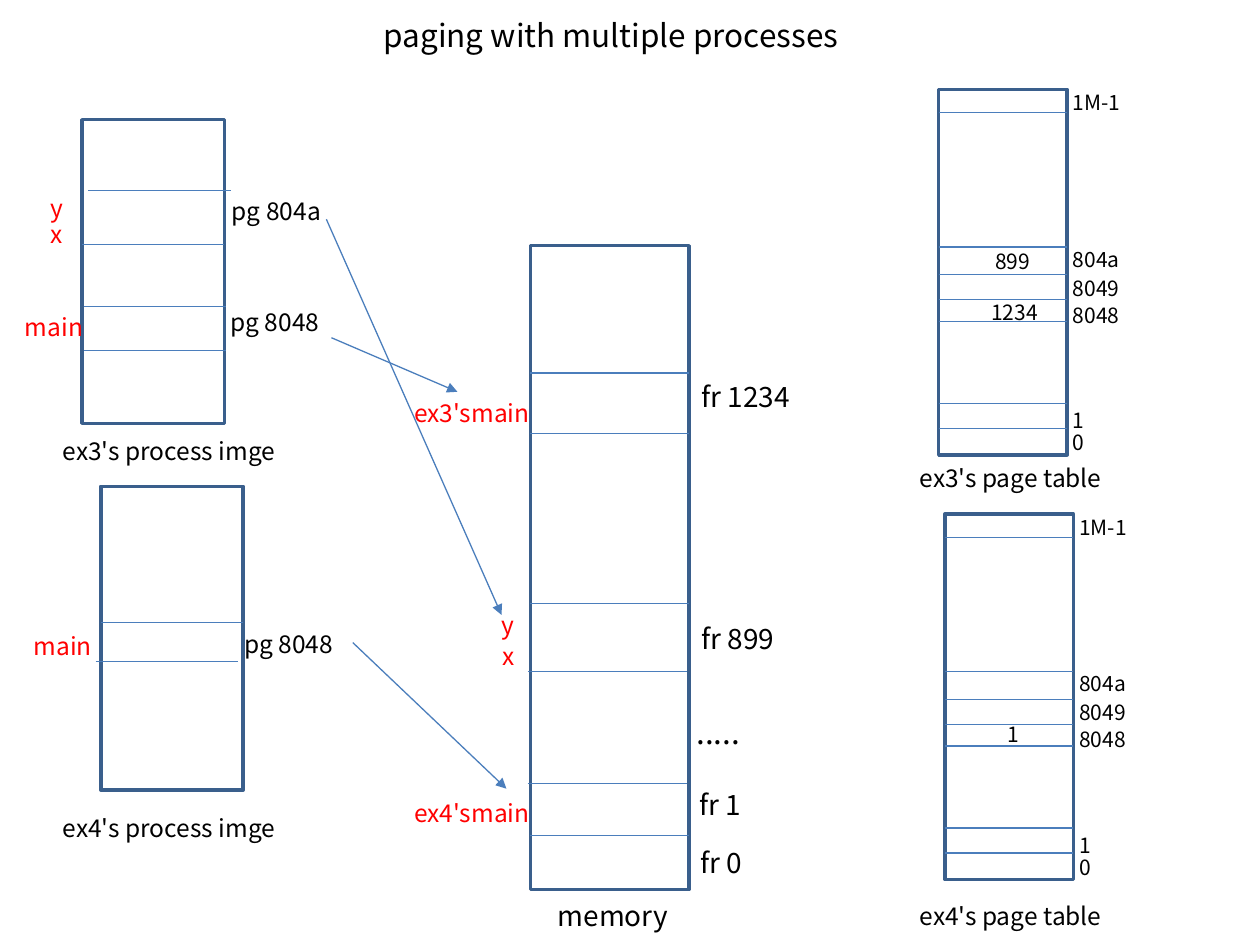
from lxml.etree import SubElement
from pptx import Presentation
from pptx.dml.color import RGBColor
from pptx.enum.shapes import MSO_CONNECTOR, MSO_SHAPE
from pptx.enum.text import MSO_ANCHOR, PP_ALIGN
from pptx.oxml.ns import qn
from pptx.util import Pt

FONT = "Noto Sans CJK KR"
BLACK, RED = "000000", "FF0000"
FRAME, RULE = "3A5F8C", "4B7EBC"


def color(value):
    return RGBColor.from_string(value)


def add_text(page, words, left, top, width, size=14, ink=BLACK, height=None):
    box = page.shapes.add_textbox(Pt(left), Pt(top), Pt(width), Pt(height or size * 1.23 + 7.2))
    box.text_frame.word_wrap = True
    para = box.text_frame.paragraphs[0]
    span = para.add_run()
    span.text = words
    span.font.name = FONT
    span.font.size = Pt(size)
    span.font.color.rgb = color(ink)
    return box


def add_line(page, x1, y1, x2, y2, arrow=False):
    line = page.shapes.add_connector(MSO_CONNECTOR.STRAIGHT, Pt(x1), Pt(y1), Pt(x2), Pt(y2))
    line.line.color.rgb = color(RULE)
    line.line.width = Pt(0.75)
    properties = line.element.spPr
    if arrow:
        SubElement(properties.find(qn("a:ln")), qn("a:tailEnd"), type="triangle")
    SubElement(properties, qn("a:effectLst"))


def add_block(page, left, top, width, height, rules):
    """Outlined memory block; each rule is (shift right, distance from top)."""
    block = page.shapes.add_shape(MSO_SHAPE.RECTANGLE, Pt(left), Pt(top), Pt(width), Pt(height))
    block.shadow.inherit = False
    block.fill.background()
    block.line.color.rgb = color(FRAME)
    block.line.width = Pt(2)
    for shift, drop in rules:
        add_line(page, left + shift, top + drop, left + shift + width, top + drop)


def add_labels(page, left, top, labels):
    """Each label is (words, dx, dy, width, size, ink), relative to the block."""
    for words, dx, dy, width, size, ink in labels:
        add_text(page, words, left + dx, top + dy, width, size, ink)


def add_title(page, left, top, width, height):
    box = add_text(page, "paging with multiple processes", left, top, width, 18, height=height)
    box.text_frame.vertical_anchor = MSO_ANCHOR.MIDDLE
    box.text_frame.paragraphs[0].alignment = PP_ALIGN.CENTER


def add_process(page, left, top, rules, labels):
    add_block(page, left, top, 81.4, 173.5, rules)
    add_labels(page, left, top, labels)


def add_memory(page, left, top, width, height):
    add_block(page, left, top, width, height,
              [(0, 72.7), (0, 107.3), (0, 204.5), (-1.4, 243.4), (-1.4, 307.4), (0, 337)])
    add_labels(page, left, top, [
        # Frame numbers
        ("fr 1234", 90.7, 72.7, 90.7, 16, BLACK),
        ("fr 899", 90.7, 211, 65.5, 16, BLACK),
        (".....", 87.8, 263.5, 80.6, 18, BLACK),
        ("fr 1", 89.3, 306, 65.5, 16, BLACK),
        ("fr 0", 90, 339.1, 65.5, 16, BLACK),
        # Contents
        ("ex3'smain", -73.4, 83.5, 90.7, 14, RED),
        ("y", -23.8, 204.5, 90.7, 14, RED),
        ("x", -23, 222.5, 90.7, 14, RED),
        ("ex4'smain", -73.4, 311.8, 90.7, 14, RED),
        ("memory", 8.6, 369.4, 96.5, 16, BLACK),
    ])


def add_page_table(page, left, top, name, caption_drop, entries):
    width = 73.4
    add_block(page, left, top, width, 208.8,
              [(0, drop) for drop in (13.3, 90, 105.8, 120.2, 132.5, 179.3, 193.7)])
    # Page numbers beside the rows
    for words, drop, span_width in [("1M-1", -3.6, 56.9), ("804a", 86, 46), ("8049", 102.5, 49),
                                    ("8048", 118, 49.7), ("1", 178.2, 19.4), ("0", 191, 19.4)]:
        add_text(page, words, left + width - 3.8, top + drop, span_width, 12)
    # Frame numbers inside the rows
    for words, dx, dy in entries:
        add_text(page, words, left + dx, top + dy, 56.9, 12)
    add_text(page, name, 518.4, top + caption_drop, 131)


def main():
    deck = Presentation()
    deck.slide_width, deck.slide_height = Pt(720), Pt(540)
    page = deck.slides.add_slide(deck.slide_layouts[6])

    add_title(page, 25.2, 2.2, 648, 36)

    # Process images
    add_process(page, 46.8, 68.4, [(3.6, 40.3), (0, 71.3), (1, 106.6), (1, 131.8)], [
        ("pg 804a", 78.5, 40.3, 69.1, 14, BLACK),
        ("pg 8048", 77.8, 103.7, 81.4, 14, BLACK),
        ("y", -25.2, 38.2, 90.7, 14, RED),
        ("x", -25.2, 53.3, 90.7, 14, RED),
        ("main", -39.6, 106.6, 90.7, 14, RED),
        ("ex3's process imge", -18, 177.1, 153.4, 14, BLACK),
    ])
    add_process(page, 57.6, 277.9, [(0, 77.8), (-2.9, 100.1)], [
        ("pg 8048", 74.9, 77.8, 69.1, 14, BLACK),
        ("main", -45.4, 79.2, 90.7, 14, RED),
        ("ex4's process imge", -28.8, 182.9, 153.4, 14, BLACK),
    ])

    add_memory(page, 303.1, 140.4, 90.7, 367.9)

    # Page tables
    add_page_table(page, 536.4, 51.1, "ex3's page table", 210.2,
                   [("899", 25.2, 87.1), ("1234", 23, 116.6)])
    add_page_table(page, 540, 293.8, "ex4's page table", 217.4, [("1", 28.8, 115.2)])

    # Arrows from pages to frames
    for ends in [(189.4, 193, 261.4, 223.9), (186.5, 125.3, 286.6, 351.4),
                 (201.6, 367.2, 289.4, 450.7)]:
        add_line(page, *ends, arrow=True)

    deck.save("out.pptx")


if __name__ == "__main__":
    main()
